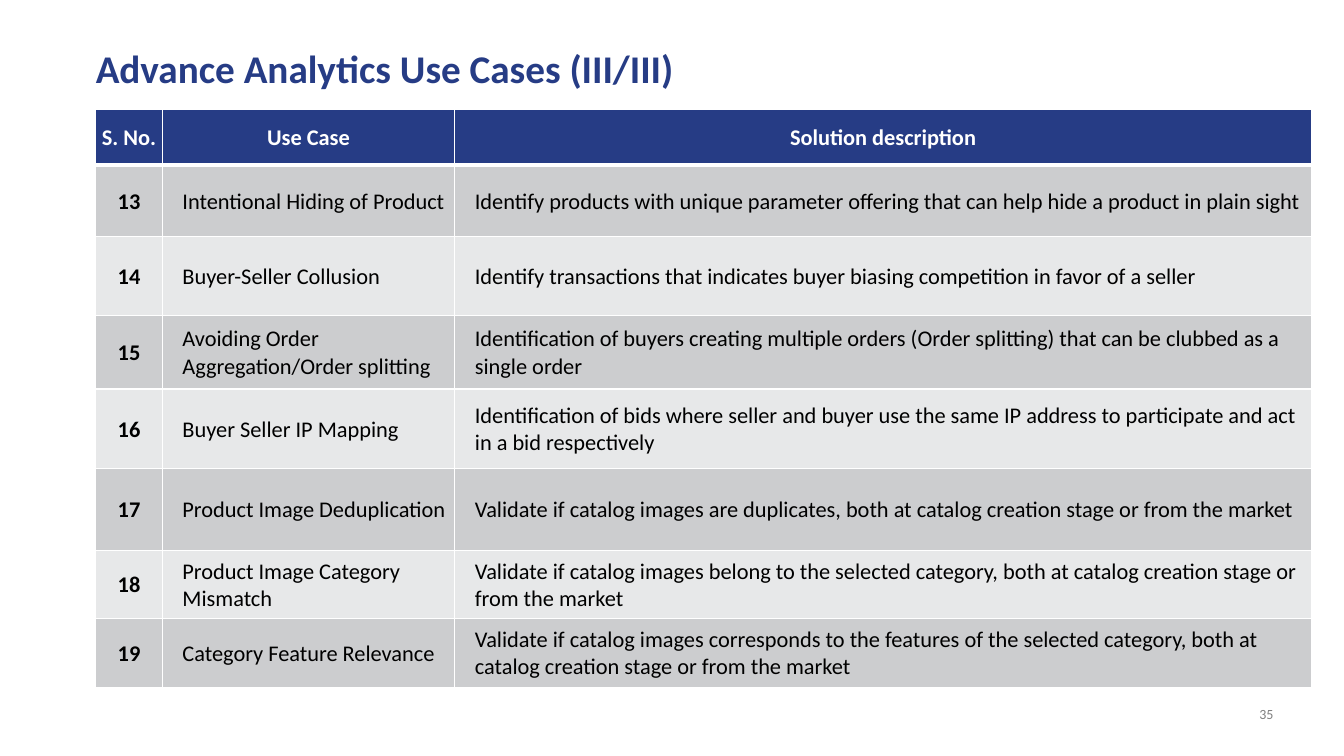
from lxml import etree
from pptx import Presentation
from pptx.dml.color import RGBColor
from pptx.enum import text
from pptx.oxml.ns import qn
from pptx.util import Inches, Pt

# Content
TITLE = "Advance Analytics Use Cases (III/III)"
PAGE_NUMBER = "35"
HEADINGS = ("S. No.", "Use Case", "Solution description")
FIRST_NUMBER = 13
USE_CASES = [
    ("Intentional Hiding of Product",
     "Identify products with unique parameter offering that can help hide a product in plain sight"),
    ("Buyer-Seller Collusion",
     "Identify transactions that indicates buyer biasing competition in favor of a seller"),
    ("Avoiding Order Aggregation/Order splitting",
     "Identification of buyers creating multiple orders (Order splitting) that can be clubbed as a single order"),
    ("Buyer Seller IP Mapping",
     "Identification of bids where seller and buyer use the same IP address to participate and act in a bid respectively"),
    ("Product Image Deduplication",
     "Validate if catalog images are duplicates, both at catalog creation stage or from the market"),
    ("Product Image Category Mismatch",
     "Validate if catalog images belong to the selected category, both at catalog creation stage or from the market"),
    ("Category Feature Relevance",
     "Validate if catalog images corresponds to the features of the selected category, both at catalog creation stage or from the market"),
]

# Look
COLORS = {"navy": "263C85", "white": "FFFFFF", "black": "000000",
          "dark band": "CCCDCF", "light band": "E7E8E9", "gray": "808080"}
FONT = "Calibri"
LEFT = 0.95
COLUMN_WIDTHS = (0.66, 2.9, 8.5)
ROW_HEIGHTS = (0.55, 0.71, 0.78, 0.73, 0.79, 0.81, 0.68, 0.68)


def rgb(name):
    return RGBColor.from_string(COLORS[name])


def style(paragraph, size, color, bold=False, align=text.PP_ALIGN.LEFT):
    paragraph.alignment = align
    for run in paragraph.runs:
        run.font.name = FONT
        run.font.size = Pt(size)
        run.font.bold = bold
        run.font.color.rgb = rgb(color)


def clear_margins(frame):
    frame.margin_left = frame.margin_right = 0
    frame.margin_top = frame.margin_bottom = 0
    frame.word_wrap = True


def add_borders(cell, widths):
    properties = cell._tc.get_or_add_tcPr()
    for side, width in widths.items():
        line = etree.SubElement(properties, qn(f"a:ln{side}"), w=str(Pt(width)))
        fill = etree.SubElement(line, qn("a:solidFill"))
        etree.SubElement(fill, qn("a:srgbClr"), val=COLORS["white"])


def fill_cell(cell, words, row, column):
    is_header = row == 0
    is_centered = is_header or column == 0
    cell.text = words
    cell.vertical_anchor = text.MSO_ANCHOR.MIDDLE
    cell.margin_left = Inches(0.01 if is_centered else 0.2)
    cell.margin_top = cell.margin_right = Inches(0.01)
    cell.margin_bottom = 0
    style(cell.text_frame.paragraphs[0], 16, "white" if is_header else "black",
          bold=is_centered,
          align=text.PP_ALIGN.CENTER if is_centered else text.PP_ALIGN.LEFT)
    add_borders(cell, {"L": 1, "R": 1, "T": 3 if row == 1 else 1, "B": 3 if is_header else 1})
    band = "dark band" if row % 2 else "light band"
    cell.fill.solid()
    cell.fill.fore_color.rgb = rgb("navy" if is_header else band)


def main():
    deck = Presentation()
    deck.slide_width, deck.slide_height = Inches(13.33), Inches(7.5)
    slide = deck.slides.add_slide(deck.slide_layouts[5])

    # Title
    title = slide.shapes.title
    title.left, title.top = Inches(LEFT), Inches(0.49)
    title.width, title.height = Inches(11.68), Inches(0.42)
    title.text_frame.text = TITLE
    clear_margins(title.text_frame)
    title.text_frame.vertical_anchor = text.MSO_ANCHOR.MIDDLE
    heading = title.text_frame.paragraphs[0]
    heading.line_spacing = 0.9
    style(heading, 28, "navy", bold=True)

    # Use case table
    rows = [HEADINGS] + [(str(number), *case)
                         for number, case in enumerate(USE_CASES, FIRST_NUMBER)]
    use_cases = slide.shapes.add_table(
        len(rows), len(HEADINGS), Inches(LEFT), Inches(1.09),
        Inches(sum(COLUMN_WIDTHS)), Inches(sum(ROW_HEIGHTS))).table
    for column, width in zip(use_cases.columns, COLUMN_WIDTHS):
        column.width = Inches(width)
    for row, height in zip(use_cases.rows, ROW_HEIGHTS):
        row.height = Inches(height)
    for r, row in enumerate(rows):
        for c, words in enumerate(row):
            fill_cell(use_cases.cell(r, c), words, r, c)

    # Page number
    page = slide.shapes.add_textbox(Inches(12.21), Inches(7), Inches(0.42), Inches(0.17))
    page.text_frame.text = PAGE_NUMBER
    clear_margins(page.text_frame)
    page.text_frame.vertical_anchor = text.MSO_ANCHOR.BOTTOM
    style(page.text_frame.paragraphs[0], 10, "gray", align=text.PP_ALIGN.RIGHT)

    deck.save("out.pptx")


if __name__ == "__main__":
    main()
